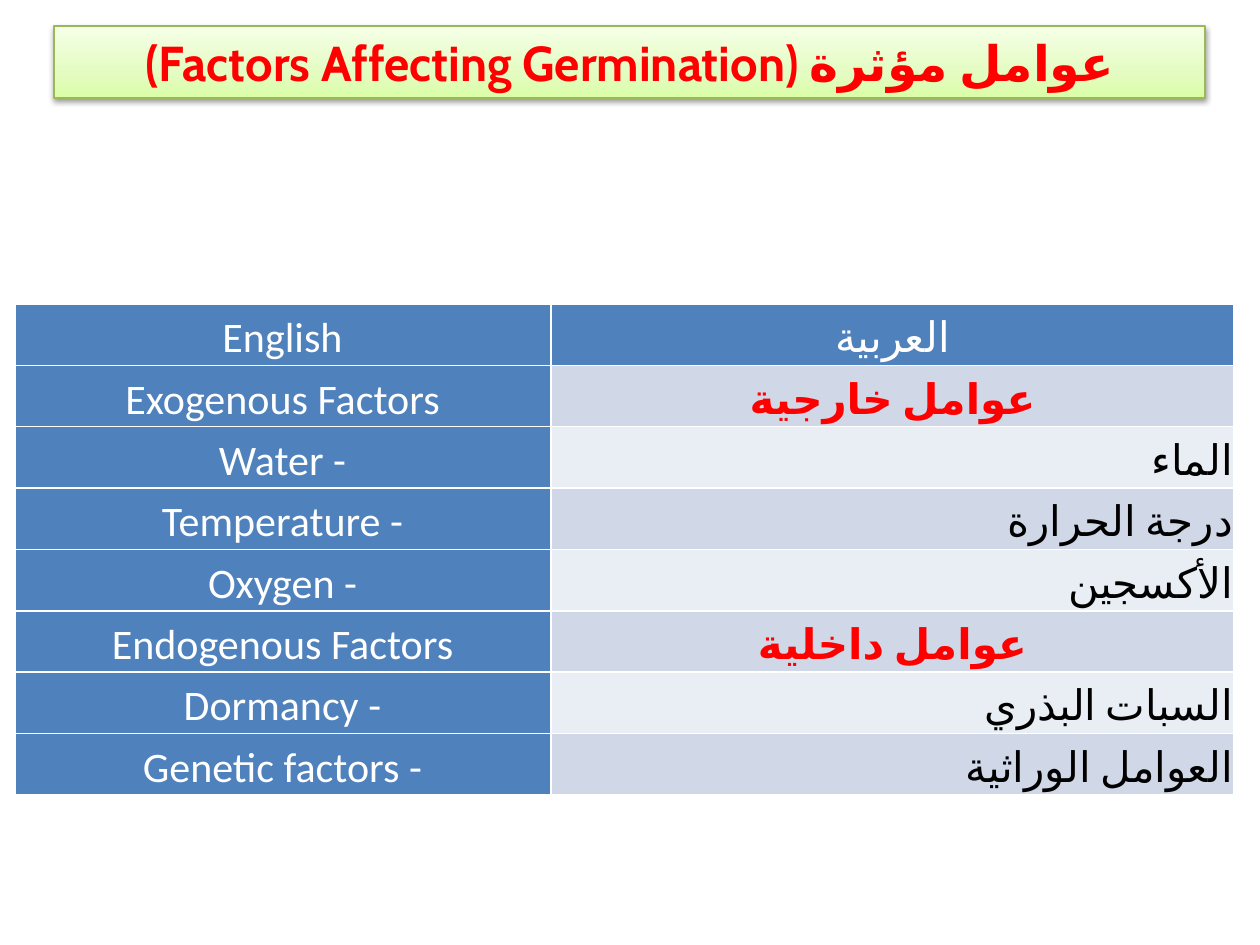
from pptx import Presentation
from pptx.dml.color import RGBColor as RGB
from pptx.enum.lang import MSO_LANGUAGE_ID as LANG
from pptx.enum.shapes import MSO_SHAPE as SHAPE
from pptx.enum.text import MSO_ANCHOR as ANCHOR, PP_ALIGN as ALIGN
from pptx.oxml import parse_xml
from pptx.oxml.ns import nsdecls
from pptx.util import Pt

PX = 914400 / 126
THEME = {
    "white": "FFFFFF", "black": "000000", "red": "FF0000",
    "blue": "4F81BD", "bands": ("E9EDF4", "D0D8E8"),
    "edge": "98B955", "greens": ((0, "DAFDA7"), (35, "E4FCC2"), (100, "F5FFE7")),
    "title_size": 28, "body_size": 24, "title_font": "Cabin", "body_font": "Calibri",
}
ROWS = [
    ("English", "العربية"),
    ("Exogenous Factors", "عوامل خارجية"),
    ("- Water", "الماء"),
    ("- Temperature", "درجة الحرارة"),
    ("- Oxygen", "الأكسجين"),
    ("Endogenous Factors", "عوامل داخلية"),
    ("- Dormancy", "السبات البذري"),
    ("- Genetic factors", "العوامل الوراثية"),
]


def px(n):
    return round(n * PX)


def write(tf, text, align, color, **font):
    p = tf.paragraphs[0]
    p.alignment = align
    p._p.get_or_add_pPr().set("rtl", "1")
    r = p.add_run()
    r.text = text
    for name, value in font.items():
        setattr(r.font, name, value)
    r.font.color.rgb = RGB.from_string(color)
    r._r.get_or_add_rPr().append(parse_xml(f'<a:cs {nsdecls("a")} typeface="{font["name"]}"/>'))
    return p


prs = Presentation()
prs.slide_width, prs.slide_height = px(1260), px(945)
s = prs.slides.add_slide(prs.slide_layouts[6])

widths = (536, 683)
table_h = px(491)
table = s.shapes.add_table(len(ROWS), 2, px(15), px(304), px(sum(widths)), table_h).table
table.first_col = True
for col, width in zip(table.columns, widths):
    col.width = px(width)

for i, row in enumerate(ROWS):
    table.rows[i].height = table_h // len(ROWS)
    heading = not row[0].startswith("-")
    for j, text in enumerate(row):
        cell = table.cell(i, j)
        main = i == 0 or j == 0
        color = THEME["white"] if main else THEME["red"] if heading else THEME["black"]
        cell_format = {"margin_left": px(j), "margin_right": px(1), "margin_top": px(1),
                       "margin_bottom": px(1), "vertical_anchor": ANCHOR.MIDDLE}
        for name, value in cell_format.items():
            setattr(cell, name, value)
        p = write(cell.text_frame, text, ALIGN.CENTER if main or heading else ALIGN.RIGHT, color,
                  size=Pt(THEME["body_size"]), name=THEME["body_font"], bold=heading and not main,
                  language_id=LANG.ARABIC if j else LANG.ENGLISH_US)
        p.line_spacing = 1.15
        tcPr = cell._tc.get_or_add_tcPr()
        for side in "LRTB":
            tcPr.append(parse_xml(
                f'<a:ln{side} {nsdecls("a")} w="{Pt(1)}"><a:solidFill>'
                f'<a:srgbClr val="{THEME["white"]}"/></a:solidFill></a:ln{side}>'))
        cell.fill.solid()
        cell.fill.fore_color.rgb = RGB.from_string(THEME["blue"] if main else THEME["bands"][i % 2])

sp = s.shapes.add_shape(SHAPE.RECTANGLE, px(54), px(26), px(1151), px(72))
sp.line.color.rgb = RGB.from_string(THEME["edge"])
sp.line.width = Pt(0.75)
stops = "".join(f'<a:gs pos="{pos * 1000}"><a:srgbClr val="{color}"/></a:gs>' for pos, color in THEME["greens"])
sp._element.spPr.insert(2, parse_xml(
    f'<a:gradFill {nsdecls("a")} rotWithShape="1"><a:gsLst>{stops}</a:gsLst>'
    '<a:lin ang="16200000" scaled="0"/></a:gradFill>'))
sp.shadow.inherit = False
sp._element.spPr[-1].append(parse_xml(
    f'<a:outerShdw {nsdecls("a")} blurRad="{Pt(3.1)}" dist="{Pt(1.6)}" dir="5400000" rotWithShape="0">'
    f'<a:srgbClr val="{THEME["black"]}"><a:alpha val="38000"/></a:srgbClr></a:outerShdw>'))
tf = sp.text_frame
tf.word_wrap = True
tf.vertical_anchor = ANCHOR.MIDDLE
write(tf, "عوامل مؤثرة (Factors Affecting Germination)", ALIGN.CENTER, THEME["red"],
      size=Pt(THEME["title_size"]), name=THEME["title_font"], bold=True, language_id=LANG.ARABIC)

prs.save("out.pptx")
